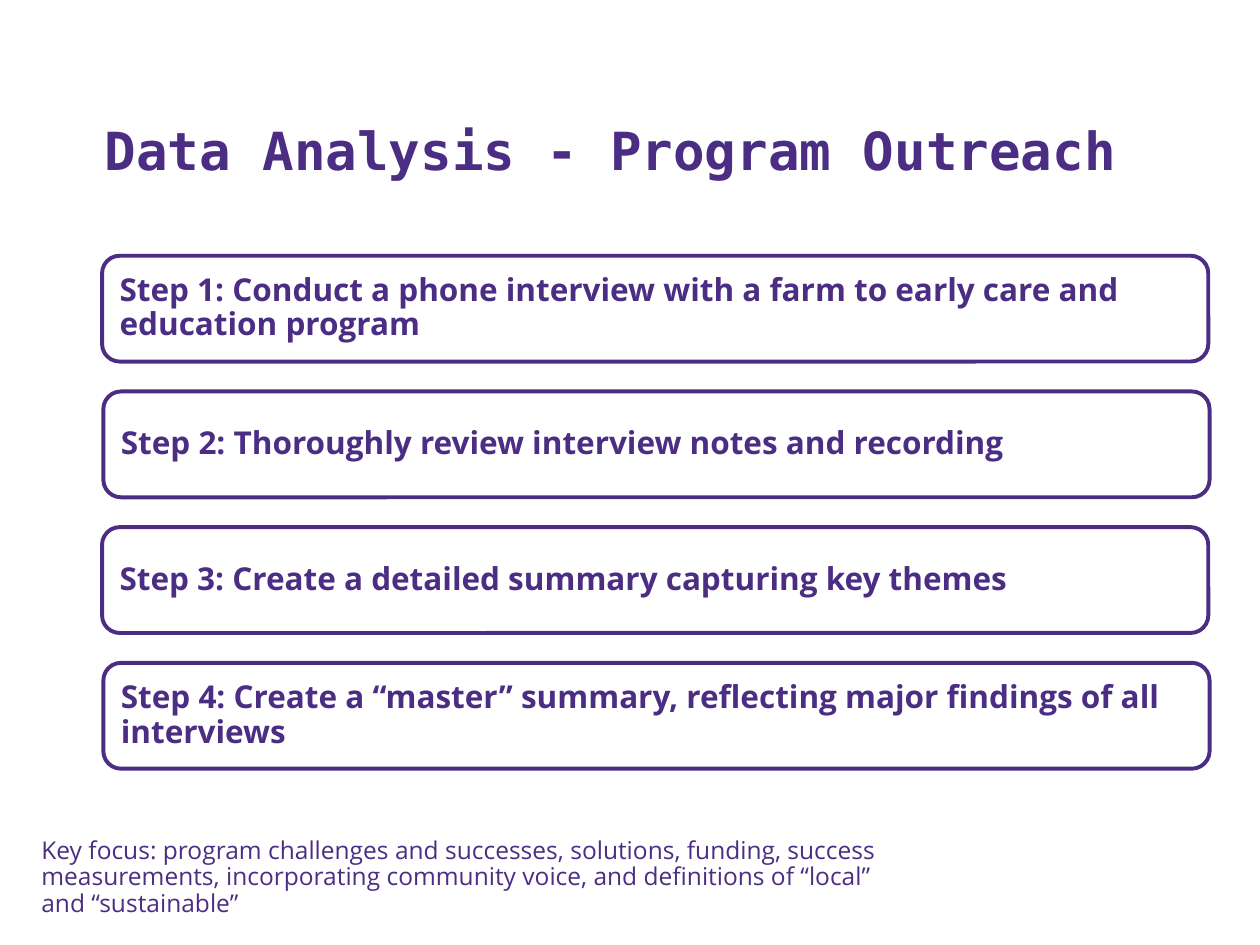
"""Build the program outreach data analysis slide with its four steps."""
from pptx import Presentation
from pptx.dml.color import RGBColor
from pptx.enum.shapes import MSO_SHAPE
from pptx.enum.text import MSO_ANCHOR, MSO_AUTO_SIZE, PP_ALIGN
from pptx.util import Inches, Pt

ROUNDED = MSO_SHAPE.ROUNDED_RECTANGLE
TOP, MIDDLE, BOTTOM = MSO_ANCHOR.TOP, MSO_ANCHOR.MIDDLE, MSO_ANCHOR.BOTTOM
NO_FIT = MSO_AUTO_SIZE.NONE
LEFT = PP_ALIGN.LEFT

COLORS = {"purple": "4B2E83", "white": "FFFFFF"}
HEADING_FONT, BODY_FONT = "DejaVu Sans Mono", "Open Sans"
STEPS = [
    "Conduct a phone interview with a farm to early care and education program",
    "Thoroughly review interview notes and recording",
    "Create a detailed summary capturing key themes",
    "Create a “master” summary, reflecting major findings of all interviews",
]
KEY_FOCUS = (
    "Key focus: program challenges and successes, solutions, funding, success "
    "measurements, incorporating community voice, and definitions of “local” "
    "and “sustainable”"
)
ROW_TOP, ROW_PITCH, ROW_HEIGHT = 2.03, 1.077, 0.84
ROW_LEFT, ROW_SHIFT, ROW_WIDTH = 0.81, 0.01, 8.78


def write(box, text, size, font, bold, anchor, inset):
    frame = box.text_frame
    frame.word_wrap = True
    frame.auto_size = NO_FIT
    frame.vertical_anchor = anchor
    frame.margin_left = frame.margin_right = Inches(0.1)
    frame.margin_top = frame.margin_bottom = Inches(inset)
    para = frame.paragraphs[0]
    para.alignment = LEFT
    para.line_spacing = 0.9
    span = para.add_run()
    span.text = text
    span.font.name = font
    span.font.size = Pt(size)
    span.font.bold = bold
    span.font.color.rgb = RGBColor.from_string(COLORS["purple"])


deck = Presentation()
deck.slide_width, deck.slide_height = Inches(10), Inches(7.5)
page = deck.slides.add_slide(deck.slide_layouts[5])

title = page.shapes.title
title.left, title.top = Inches(0.73), Inches(0.41)
title.width, title.height = Inches(8.95), Inches(1.08)
write(title, "Data Analysis - Program Outreach", 30, HEADING_FONT, True, BOTTOM, 0.05)

for row, step in enumerate(STEPS):
    box = page.shapes.add_shape(
        ROUNDED,
        Inches(ROW_LEFT + row % 2 * ROW_SHIFT),
        Inches(ROW_TOP + row * ROW_PITCH),
        Inches(ROW_WIDTH),
        Inches(ROW_HEIGHT),
    )
    box.adjustments[0] = 0.167
    box.shadow.inherit = False
    box.fill.solid()
    box.fill.fore_color.rgb = RGBColor.from_string(COLORS["white"])
    box.line.color.rgb = RGBColor.from_string(COLORS["purple"])
    box.line.width = Pt(2.25)
    write(box, f"Step {row + 1}: {step}", 18, BODY_FONT, True, MIDDLE, 0.1)

focus = page.shapes.add_textbox(Inches(0.23), Inches(6.55), Inches(7.02), Inches(0.8))
write(focus, KEY_FOCUS, 14, BODY_FONT, False, TOP, 0.1)

deck.save("out.pptx")
